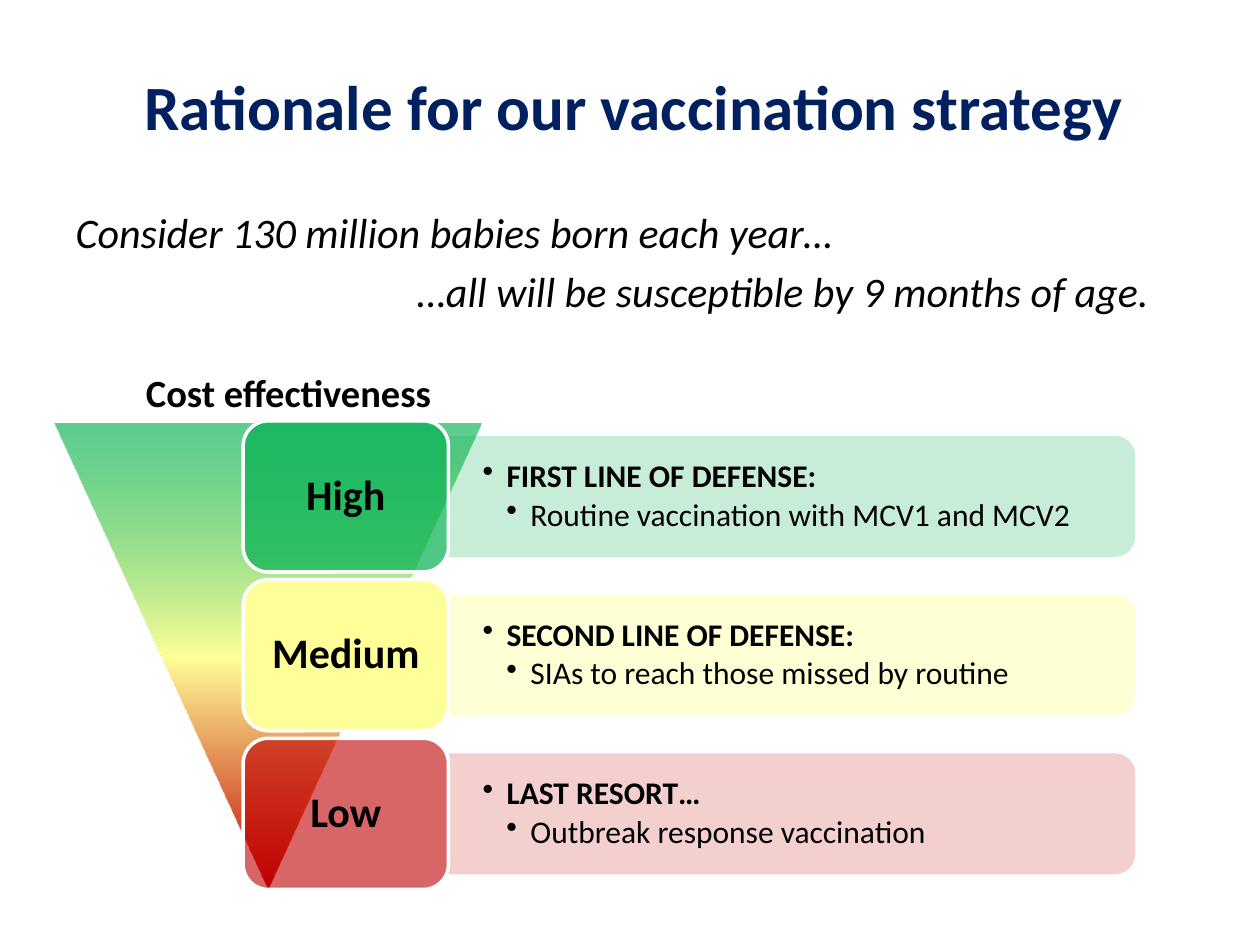
"""Build a slide that ranks three vaccination strategies by cost effectiveness."""
from dataclasses import dataclass

from lxml.etree import SubElement
from pptx import Presentation
from pptx.dml.color import RGBColor
from pptx.enum.shapes import MSO_SHAPE
from pptx.enum.text import MSO_ANCHOR, MSO_AUTO_SIZE, PP_ALIGN
from pptx.oxml import parse_xml
from pptx.oxml.ns import nsdecls, qn
from pptx.util import Inches, Pt

INK = {"navy": "002060", "black": "000000", "white": "FFFFFF",
       "green": "00B050", "yellow": "FFFF99", "red": "C00000"}
WIDE, HIGH = Inches(10), Inches(7.5)
COL, ROW = WIDE / 100, HIGH / 75
TOP, STEP = 33.4, 12.6


@dataclass
class Box:
    """A place on a grid of 100 columns and 75 rows."""
    x: float
    y: float
    w: float
    h: float

    def emu(self) -> tuple[int, ...]:
        """Return left, top, width and height."""
        return (round(self.x * COL), round(self.y * ROW),
                round(self.w * COL), round(self.h * ROW))


@dataclass
class Tier:
    """One level of cost effectiveness."""
    rank: str
    head: str
    note: str
    hue: str
    pill: int
    band: int


TIERS = [
    Tier("High", "FIRST LINE OF DEFENSE:",
         "Routine vaccination with MCV1 and MCV2", "green", 69, 22),
    Tier("Medium", "SECOND LINE OF DEFENSE:",
         "SIAs to reach those missed by routine", "yellow", 100, 40),
    Tier("Low", "LAST RESORT…",
         "Outbreak response vaccination", "red", 60, 19),
]


def style(para, size: float, hue: str = "black", bold: bool = False,
          slant: bool = False) -> None:
    """Format every run of a paragraph."""
    for run in para.runs:
        font = run.font
        font.name, font.size = "Calibri", Pt(size)
        font.bold, font.italic = bold, slant
        font.color.rgb = RGBColor.from_string(INK[hue])


def indent(para, left: float, first: float = 0, mark: str = "") -> None:
    """Set the indents in grid columns, and the bullet if there is one."""
    props = para._p.get_or_add_pPr()
    props.set("marL", str(round(left * COL)))
    props.set("indent", str(round(first * COL)))
    if mark:
        SubElement(props, qn("a:buChar")).set("char", mark)
    else:
        SubElement(props, qn("a:buNone"))


def place(item, box: Box) -> None:
    """Move an item to its box."""
    item.left, item.top, item.width, item.height = box.emu()


def form(slide, kind: MSO_SHAPE, box: Box, hue: str, alpha: int = 100):
    """Add a plain filled shape without a line."""
    shape = slide.shapes.add_shape(kind, *box.emu())
    shape.shadow.inherit = False
    shape.line.fill.background()
    shape.fill.solid()
    shape.fill.fore_color.rgb = RGBColor.from_string(INK[hue])
    if alpha < 100:
        tint = shape._element.spPr.find(qn("a:solidFill"))[0]
        SubElement(tint, qn("a:alpha")).set("val", str(alpha * 1000))
    return shape


def wedge(slide) -> None:
    """Add the triangle that points down from green to red."""
    shape = form(slide, MSO_SHAPE.ISOSCELES_TRIANGLE,
                 Box(4.3, 33.6, 33.9, 37), "red")
    shape.rotation = 180
    stops = "".join(
        f'<a:gs pos="{pos}000"><a:srgbClr val="{INK[hue]}">'
        f'<a:alpha val="{alpha}000"/></a:srgbClr></a:gs>'
        for pos, hue, alpha in
        [(0, "red", 100), (50, "yellow", 100), (100, "green", 63)])
    props = shape._element.spPr
    props.replace(props.find(qn("a:solidFill")), parse_xml(
        f'<a:gradFill {nsdecls("a")} rotWithShape="1"><a:gsLst>{stops}'
        '</a:gsLst><a:lin ang="5400000" scaled="0"/></a:gradFill>'))


def band(slide, tier: Tier, y: float) -> None:
    """Add the tinted band of a tier with its two bullets."""
    wide, high = 54.5, 9.6
    mid = y + 6
    shape = form(slide, MSO_SHAPE.ROUND_2_SAME_RECTANGLE,
                 Box(35.6 + (wide - high) / 2, mid - wide / 2, high, wide),
                 tier.hue, tier.band)
    shape.rotation = 90
    text = slide.shapes.add_textbox(*Box(35.6, mid - 4.35, 54.1, 8.7).emu())
    frame = text.text_frame
    frame.word_wrap = True
    frame.vertical_anchor = MSO_ANCHOR.MIDDLE
    frame.margin_left = frame.margin_right = round(2.7 * COL)
    frame.margin_top = frame.margin_bottom = round(1.4 * ROW)
    frame.text = f"{tier.head}\n{tier.note}"
    for rank, para in enumerate(frame.paragraphs, 1):
        para.level = rank
        para.line_spacing, para.space_after = 0.9, Pt(2.7)
        indent(para, 1.9 * rank, -1.9, "•")
        style(para, 18, bold=rank == 1)


def pill(slide, tier: Tier, y: float) -> None:
    """Add the rounded label of a tier."""
    shape = form(slide, MSO_SHAPE.ROUNDED_RECTANGLE,
                 Box(19.3, y, 16.3, 12), tier.hue, tier.pill)
    shape.line.color.rgb = RGBColor.from_string(INK["white"])
    shape.line.width = Pt(2)
    frame = shape.text_frame
    frame.vertical_anchor = MSO_ANCHOR.MIDDLE
    frame.text = tier.rank
    para = frame.paragraphs[0]
    para.alignment, para.line_spacing = PP_ALIGN.CENTER, 0.9
    style(para, 24, bold=True)


def words(slide) -> None:
    """Fill the title, the lead and the caption of the triangle."""
    title, body = slide.placeholders
    place(title, Box(2.8, 2.1, 95, 12.5))
    title.text_frame.text = "Rationale for our vaccination strategy"
    style(title.text_frame.paragraphs[0], 36, "navy", bold=True)
    place(body, Box(5, 15.9, 88.3, 12.1))
    frame = body.text_frame
    frame.auto_size = MSO_AUTO_SIZE.NONE
    frame.text = ("Consider 130 million babies born each year…\n"
                  "…all will be susceptible by 9 months of age.")
    for para, left in zip(frame.paragraphs, (0, 27.1)):
        indent(para, left)
        style(para, 24, slant=True)
    label = slide.shapes.add_textbox(*Box(10.6, 28.8, 25.1, 4.7).emu())
    frame = label.text_frame
    frame.word_wrap = False
    frame.auto_size = MSO_AUTO_SIZE.SHAPE_TO_FIT_TEXT
    frame.text = "Cost effectiveness"
    style(frame.paragraphs[0], 22, bold=True)


def main() -> None:
    """Build and save the slide."""
    deck = Presentation()
    deck.slide_width, deck.slide_height = WIDE, HIGH
    slide = deck.slides.add_slide(deck.slide_layouts[1])
    wedge(slide)
    for row, tier in enumerate(TIERS):
        band(slide, tier, TOP + row * STEP)
        pill(slide, tier, TOP + row * STEP)
    words(slide)
    deck.save("out.pptx")


if __name__ == "__main__":
    main()
